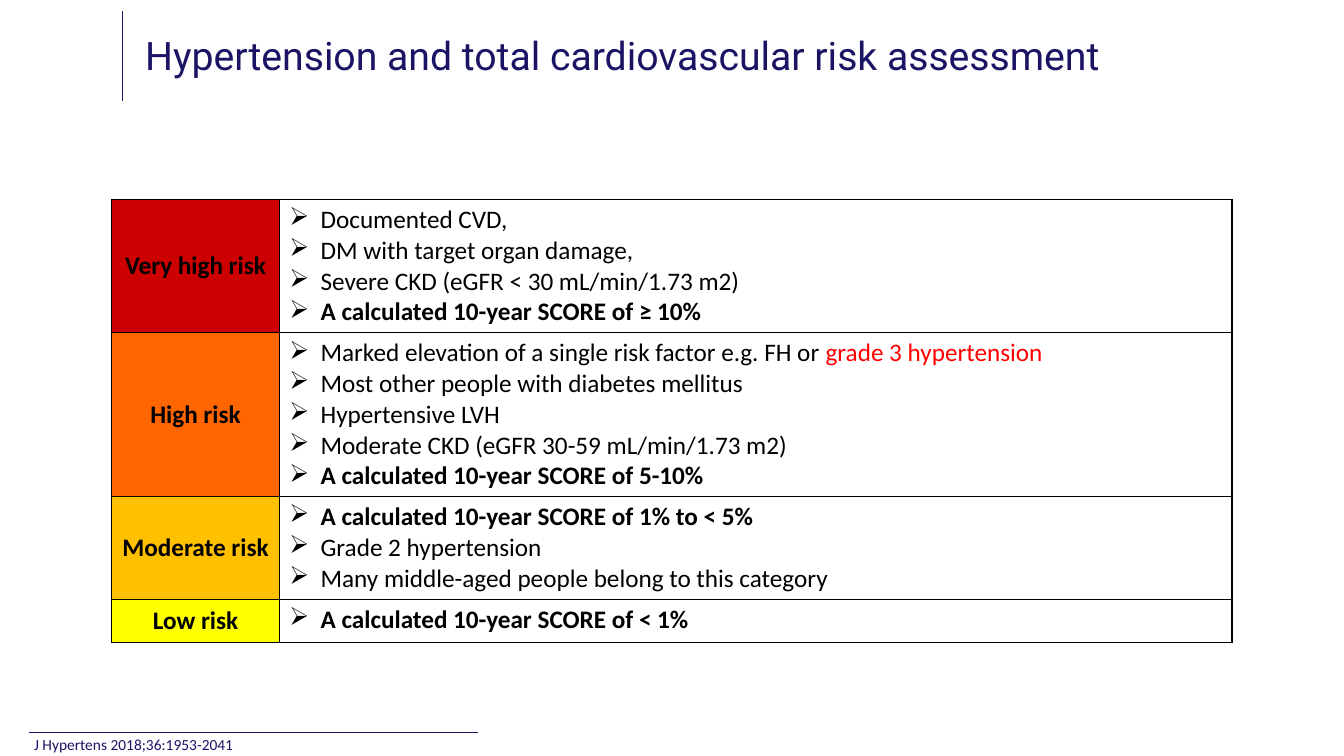
from lxml import etree
from pptx import Presentation
from pptx.dml.color import RGBColor
from pptx.enum.shapes import MSO_CONNECTOR
from pptx.enum.text import MSO_ANCHOR, PP_ALIGN
from pptx.oxml.ns import qn
from pptx.util import Inches, Pt

LEFT, CENTER = PP_ALIGN.LEFT, PP_ALIGN.CENTER
TOP, MIDDLE = MSO_ANCHOR.TOP, MSO_ANCHOR.MIDDLE
STRAIGHT = MSO_CONNECTOR.STRAIGHT

NAVY = RGBColor(0x1B, 0x14, 0x65)
BLACK = RGBColor(0x00, 0x00, 0x00)
RED = RGBColor(0xFF, 0x00, 0x00)
CRIMSON = RGBColor(0xCC, 0x00, 0x00)
ORANGE = RGBColor(0xFF, 0x66, 0x00)
AMBER = RGBColor(0xFF, 0xC0, 0x00)
YELLOW = RGBColor(0xFF, 0xFF, 0x00)

PLAIN, BOLD = {}, {"bold": True}

# Each risk level: name, colour, row height, criteria as lists of (text, format)
RISK_LEVELS = [
    ("Very high risk", CRIMSON, 1.32, [
        [("Documented CVD,", PLAIN)],
        [("DM with target organ damage,", PLAIN)],
        [("Severe CKD (eGFR < 30 mL/min/1.73 m2)", PLAIN)],
        [("A calculated 10-year SCORE of ≥ 10%", BOLD)],
    ]),
    ("High risk", ORANGE, 1.62, [
        [("Marked elevation of a single risk factor e.g. FH or ", PLAIN),
         ("grade 3 hypertension", {"color": RED})],
        [("Most other people with diabetes mellitus", PLAIN)],
        [("Hypertensive LVH", PLAIN)],
        [("Moderate CKD (eGFR 30-59 mL/min/1.73 m2)", PLAIN)],
        [("A calculated 10-year SCORE of 5-10%", BOLD)],
    ]),
    ("Moderate risk", AMBER, 1.02, [
        [("A calculated 10-year SCORE of 1% to < 5%", BOLD)],
        [("Grade 2 hypertension", PLAIN)],
        [("Many middle-aged people belong to this category", PLAIN)],
    ]),
    ("Low risk", YELLOW, 0.43, [
        [("A calculated 10-year SCORE of < 1%", BOLD)],
    ]),
]


def add_run(paragraph, text, size=18, font="Calibri", color=BLACK, bold=False):
    run = paragraph.add_run()
    run.text = text
    run.font.size = Pt(size)
    run.font.name = font
    run.font.bold = bold
    run.font.color.rgb = color


def add_bullet(paragraph, indent=0.31):
    properties = paragraph._p.get_or_add_pPr()
    properties.set("marL", str(Inches(indent)))
    properties.set("indent", str(-Inches(indent)))
    etree.SubElement(properties, qn("a:buChar"), char="➢")


def add_borders(cell, color=BLACK, width=1):
    properties = cell._tc.get_or_add_tcPr()
    for side in ("lnL", "lnR", "lnT", "lnB"):
        border = etree.SubElement(properties, qn(f"a:{side}"), w=str(Pt(width)))
        fill = etree.SubElement(border, qn("a:solidFill"))
        etree.SubElement(fill, qn("a:srgbClr"), val=str(color))


class RiskSlide:
    def __init__(self, presentation):
        self.slide = presentation.slides.add_slide(presentation.slide_layouts[5])
        self.shapes = self.slide.shapes

    def line(self, x1, y1, x2, y2):
        connector = self.shapes.add_connector(
            STRAIGHT, Inches(x1), Inches(y1), Inches(x2), Inches(y2))
        connector.line.color.rgb = NAVY
        connector.line.width = Pt(0.5)
        etree.SubElement(connector._element.spPr, qn("a:effectLst"))

    def format_text(self, shape, text, **style):
        frame = shape.text_frame
        frame.word_wrap = True
        frame.vertical_anchor = MIDDLE
        frame.margin_top = frame.margin_bottom = 0
        paragraph = frame.paragraphs[0]
        paragraph.alignment = LEFT
        paragraph.line_spacing = 0.9
        add_run(paragraph, text, color=NAVY, **style)

    def title(self, text, left, top, width, height):
        title = self.shapes.title
        title.left, title.top = Inches(left), Inches(top)
        title.width, title.height = Inches(width), Inches(height)
        self.format_text(title, text, size=28, font="Roboto")

    def text(self, text, left, top, width, height, **style):
        box = self.shapes.add_textbox(
            Inches(left), Inches(top), Inches(width), Inches(height))
        self.format_text(box, text, **style)

    def cell(self, cell, criteria, fill=None):
        add_borders(cell)
        if fill is None:
            cell.fill.background()
        else:
            cell.fill.solid()
            cell.fill.fore_color.rgb = fill
        cell.vertical_anchor = TOP if fill is None else MIDDLE
        frame = cell.text_frame
        for index, runs in enumerate(criteria):
            paragraph = frame.add_paragraph() if index else frame.paragraphs[0]
            if fill is None:
                add_bullet(paragraph)
            paragraph.alignment = LEFT if fill is None else CENTER
            for text, style in runs:
                add_run(paragraph, text, **style)

    def risk_table(self, levels, left, top, column_widths):
        height = sum(level[2] for level in levels)
        table = self.shapes.add_table(
            len(levels), len(column_widths), Inches(left), Inches(top),
            Inches(sum(column_widths)), Inches(height)).table
        table.first_row = table.horz_banding = False
        for column, width in zip(table.columns, column_widths):
            column.width = Inches(width)
        for index, (name, color, row_height, criteria) in enumerate(levels):
            table.rows[index].height = Inches(row_height)
            self.cell(table.cell(index, 0), [[(name, BOLD)]], fill=color)
            self.cell(table.cell(index, 1), criteria)


def main():
    presentation = Presentation()
    presentation.slide_width = Inches(13.33)
    presentation.slide_height = Inches(7.5)
    slide = RiskSlide(presentation)

    # Rules beside the title and above the reference
    slide.line(1.21, 0.11, 1.21, 1)
    slide.line(0.29, 7.27, 4.74, 7.27)

    # Title, risk table and reference
    slide.title("Hypertension and total cardiovascular risk assessment",
                1.34, 0.05, 9.94, 1.05)
    slide.risk_table(RISK_LEVELS, 1.11, 1.98, [1.66, 9.45])
    slide.text("J Hypertens 2018;36:1953-2041", 0.24, 7.3, 8.33, 0.2, size=11)

    presentation.save("out.pptx")


if __name__ == "__main__":
    main()
